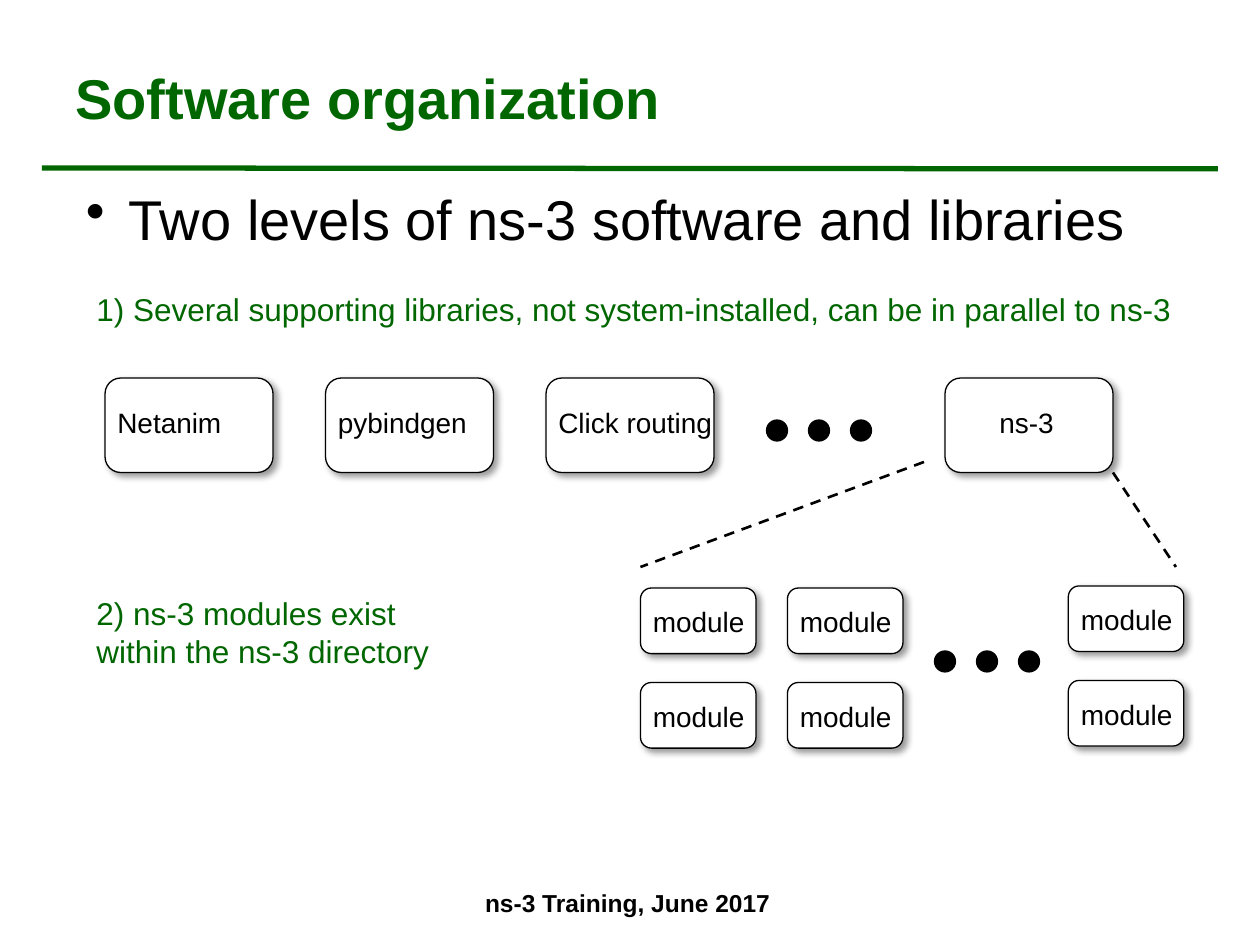
from lxml import etree
from pptx import Presentation
from pptx.dml.color import RGBColor
from pptx.enum.dml import MSO_LINE
from pptx.enum.shapes import MSO_CONNECTOR, MSO_SHAPE
from pptx.enum.text import MSO_ANCHOR, MSO_AUTO_SIZE, PP_ALIGN
from pptx.oxml.ns import qn
from pptx.util import Pt

STRAIGHT = MSO_CONNECTOR.STRAIGHT
CARD, DOT = MSO_SHAPE.FLOWCHART_ALTERNATE_PROCESS, MSO_SHAPE.OVAL
DASH = MSO_LINE.DASH
TOP, MIDDLE = MSO_ANCHOR.TOP, MSO_ANCHOR.MIDDLE
FIT, FIXED = MSO_AUTO_SIZE.SHAPE_TO_FIT_TEXT, MSO_AUTO_SIZE.NONE
LEFT, CENTER = PP_ALIGN.LEFT, PP_ALIGN.CENTER
COLORS = {"green": "006600", "black": "000000", "white": "FFFFFF"}


def rgb(name):
    return RGBColor.from_string(COLORS[name])


def add_text(frame, text, size=16, color="black", bold=False, align=LEFT, bullet=None, indent=0):
    for index, line in enumerate(text.split("\n")):
        para = frame.paragraphs[0] if index == 0 else frame.add_paragraph()
        para.alignment = align
        if bullet:
            props = para._p.get_or_add_pPr()
            props.set("marL", str(Pt(indent)))
            props.set("indent", str(-Pt(indent)))
            etree.SubElement(props, qn("a:buChar"), char=bullet)
        span = para.add_run()
        span.text = line
        span.font.name = "Arial"
        span.font.size = Pt(size)
        span.font.bold = bold
        span.font.color.rgb = rgb(color)


class SlideBuilder:
    """Draw the elements of one slide in a shared style."""

    def __init__(self, slide):
        self.shapes = slide.shapes

    def text(self, left, top, width, height, text, wrap=True, fit=FIXED, anchor=TOP, **style):
        box = self.shapes.add_textbox(Pt(left), Pt(top), Pt(width), Pt(height))
        frame = box.text_frame
        frame.word_wrap = wrap
        frame.auto_size = fit
        frame.vertical_anchor = anchor
        add_text(frame, text, **style)

    def shape(self, kind, left, top, width, height, fill):
        shape = self.shapes.add_shape(kind, Pt(left), Pt(top), Pt(width), Pt(height))
        shape.shadow.inherit = False
        shape.fill.solid()
        shape.fill.fore_color.rgb = rgb(fill)
        shape.line.color.rgb = rgb("black")
        shape.line.width = Pt(0.75)
        return shape

    def card(self, left, top, width, height):
        card = self.shape(CARD, left, top, width, height, "white")
        effects = card._element.spPr.find(qn("a:effectLst"))
        shadow = etree.SubElement(effects, qn("a:outerShdw"), blurRad=str(Pt(4)),
                                  dist=str(Pt(3)), dir="2700000", algn="tl", rotWithShape="0")
        color = etree.SubElement(shadow, qn("a:srgbClr"), val=COLORS["black"])
        etree.SubElement(color, qn("a:alpha"), val="40000")

    def library(self, left, label, inset=0, width=102, wrap=True):
        self.card(left, 216, 96, 54)
        self.text(left + inset, 228, width, 26.64, label, wrap=wrap, fit=FIT)

    def module(self, left, top):
        self.card(left, top, 66, 37.5)
        self.text(left, top + 6, 67.5, 26.64, "module", wrap=False, fit=FIT)

    def dots(self, left, top):
        for index in range(3):
            self.shape(DOT, left + 24 * index, top, 12, 12, "black")

    def line(self, start, end, color="black", width=1.5, dash=None):
        line = self.shapes.add_connector(STRAIGHT, *map(Pt, start + end))
        line.line.color.rgb = rgb(color)
        line.line.width = Pt(width)
        if dash:
            line.line.dash_style = dash
        etree.SubElement(line._element.spPr, qn("a:effectLst"))


def main():
    deck = Presentation()
    deck.slide_width, deck.slide_height = Pt(720), Pt(540)
    page = SlideBuilder(deck.slides.add_slide(deck.slide_layouts[6]))

    page.line((24, 96), (696, 96.5), color="green", width=3)
    page.text(36, 21.6, 646, 67.7, "Software organization", anchor=MIDDLE,
              size=32, color="green", bold=True)
    page.text(42, 102, 646, 384, "Two levels of ns-3 software and libraries",
              size=32, bullet="•", indent=24.5)

    page.text(48, 162, 634.3, 28.8,
              "1) Several supporting libraries, not system-installed, can be in parallel to ns-3",
              wrap=False, fit=FIT, size=18, color="green")
    page.library(60, "Netanim")
    page.library(186, "pybindgen")
    page.library(312, "Click routing", width=103, wrap=False)
    page.dots(438, 240)
    page.library(540, "ns-3", inset=24, width=46, wrap=False)

    page.line((528, 264), (366, 324), dash=DASH)
    page.line((636, 270), (672, 324), dash=DASH)

    page.text(48, 336, 206.6, 51, "2) ns-3 modules exist\nwithin the ns-3 directory",
              wrap=False, fit=FIT, size=18, color="green")
    for left, top in ((366, 336), (450, 336), (610.5, 334.8)):
        for row in range(2):
            page.module(left, top + 54 * row)
    page.dots(534, 372)

    page.text(246, 504, 225.4, 36, "ns-3 Training, June 2017", size=14, bold=True, align=CENTER)
    deck.save("out.pptx")


if __name__ == "__main__":
    main()
